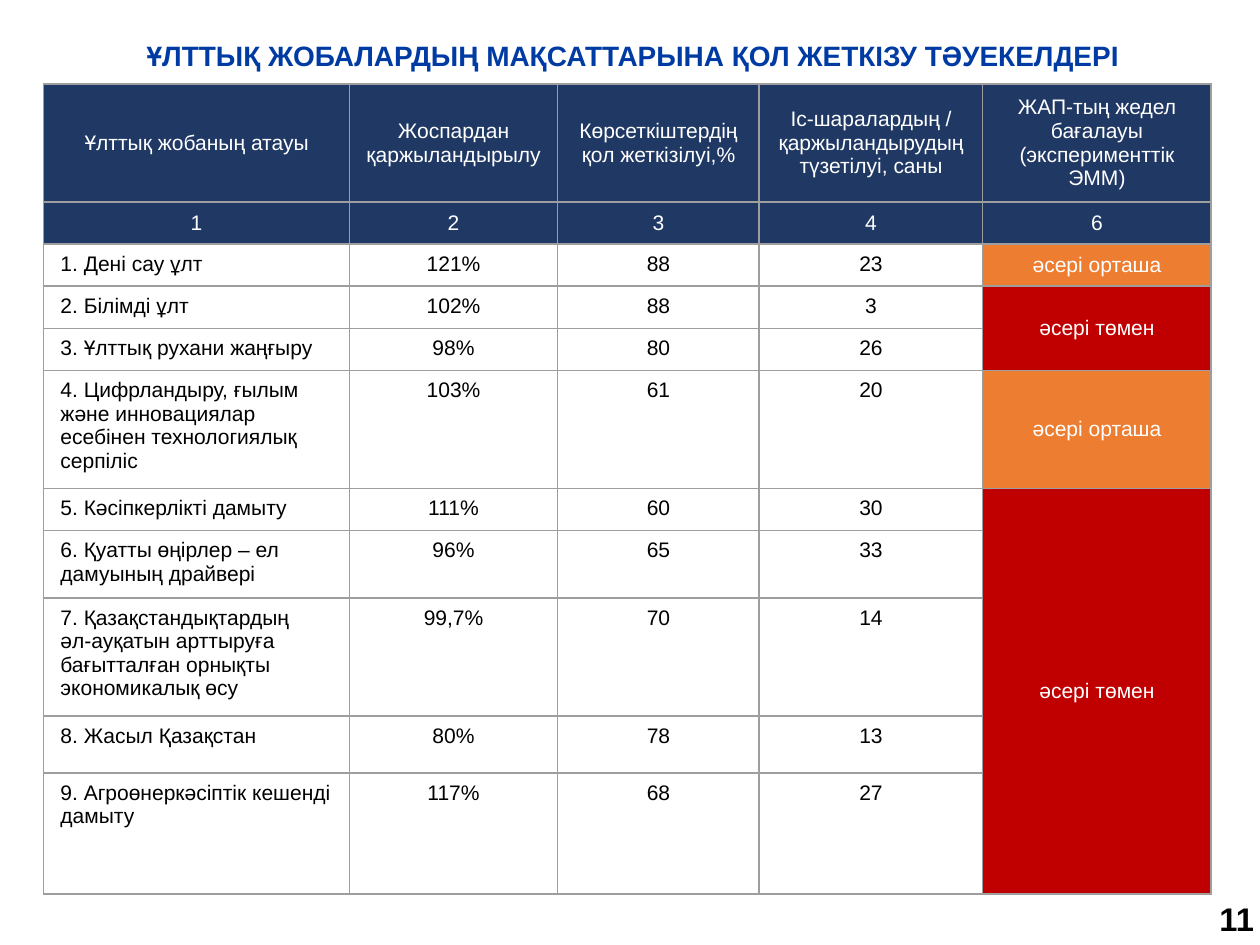
from pptx import Presentation
from pptx.dml.color import RGBColor
from pptx.enum import text
from pptx.oxml import parse_xml
from pptx.oxml.ns import nsdecls
from pptx.util import Inches, Pt

TITLE_BLUE = RGBColor(0x00, 0x3B, 0xA3)
NAVY = RGBColor(0x20, 0x38, 0x64)
ORANGE = RGBColor(0xED, 0x7D, 0x31)
RED = RGBColor(0xC0, 0x00, 0x00)
WHITE = RGBColor(0xFF, 0xFF, 0xFF)
BLACK = RGBColor(0x00, 0x00, 0x00)
BORDER = RGBColor(0x9E, 0x9E, 0x9E)

LEFT, CENTER = text.PP_ALIGN.LEFT, text.PP_ALIGN.CENTER
TOP, MIDDLE = text.MSO_ANCHOR.TOP, text.MSO_ANCHOR.MIDDLE

COLUMN_WIDTHS = [1.82, 1.24, 1.2, 1.33, 1.36]
ROW_HEIGHTS = [0.61, 0.17, 0.25, 0.25, 0.25, 0.29, 0.16, 0.4, 0.55, 0.34, 0.72]
HEADERS = [
    ["Ұлттық жобаның атауы", "Жоспардан қаржыландырылу",
     "Көрсеткіштердің қол жеткізілуі,%",
     "Іс-шаралардың / қаржыландырудың түзетілуі, саны",
     "ЖАП-тың жедел бағалауы\n(эксперименттік ЭММ)"],
    ["1", "2", "3", "4", "6"],
]
PROJECTS = [
    ["1. Дені сау ұлт", "121%", "88", "23"],
    ["2. Білімді ұлт", "102%", "88", "3"],
    ["3. Ұлттық рухани жаңғыру", "98%", "80", "26"],
    ["4. Цифрландыру, ғылым және инновациялар есебінен технологиялық серпіліс",
     "103%", "61", "20"],
    ["5. Кәсіпкерлікті дамыту", "111%", "60", "30"],
    ["6. Қуатты өңірлер – ел дамуының драйвері", "96%", "65", "33"],
    ["7. Қазақстандықтардың\nәл-ауқатын арттыруға бағытталған орнықты "
     "экономикалық өсу", "99,7%", "70", "14"],
    ["8. Жасыл Қазақстан", "80%", "78", "13"],
    ["9. Агроөнеркәсіптік кешенді дамыту", "117%", "68", "27"],
]
MEDIUM = ("әсері орташа", ORANGE)
LOW = ("әсері төмен", RED)
RATINGS = [(MEDIUM, 1), (LOW, 2), (MEDIUM, 1), (LOW, 5)]  # rating, rows covered


def write(tf, content, size, color, align=LEFT, bold=False):
    for i, line in enumerate(content.split("\n")):
        p = tf.paragraphs[0] if i == 0 else tf.add_paragraph()
        p.alignment = align
        r = p.add_run()
        r.text = line
        r.font.name = "Arial"
        r.font.size = Pt(size)
        r.font.bold = bold
        r.font.color.rgb = color


def add_label(slide, box, content, size, color, align=LEFT, inset=None):
    tf = slide.shapes.add_textbox(*map(Inches, box)).text_frame
    tf.word_wrap = True
    if inset is not None:
        tf.margin_left = tf.margin_right = Inches(inset)
        tf.margin_top = tf.margin_bottom = Inches(inset)
    write(tf, content, size, color, align, bold=True)
    return tf


def add_borders(cell):
    tc_pr = cell._tc.get_or_add_tcPr()
    for i, side in enumerate(("lnL", "lnR", "lnT", "lnB")):
        tc_pr.insert(i, parse_xml(
            f'<a:{side} {nsdecls("a")} w="{Pt(0.75)}"><a:solidFill>'
            f'<a:srgbClr val="{BORDER}"/></a:solidFill></a:{side}>'))


def fill_cell(cell, content, color, fill=None, align=CENTER, anchor=TOP):
    cell.vertical_anchor = anchor
    if fill is not None:
        cell.fill.solid()
        cell.fill.fore_color.rgb = fill
    write(cell.text_frame, content, 9, color, align)


def add_risk_table(slide, left, top, width, height):
    frame = slide.shapes.add_table(
        len(ROW_HEIGHTS), len(COLUMN_WIDTHS),
        Inches(left), Inches(top), Inches(width), Inches(height))
    table = frame.table
    table.first_row = table.horz_banding = False
    for column, column_width in zip(table.columns, COLUMN_WIDTHS):
        column.width = Inches(column_width)
    for row, row_height in zip(table.rows, ROW_HEIGHTS):
        row.height = Inches(row_height)
    frame.height = Inches(height)
    for cell in table.iter_cells():
        cell.fill.background()
        add_borders(cell)

    for i, labels in enumerate(HEADERS):
        for j, label in enumerate(labels):
            fill_cell(table.cell(i, j), label, WHITE, NAVY, anchor=MIDDLE)
    for i, values in enumerate(PROJECTS, len(HEADERS)):
        for j, value in enumerate(values):
            fill_cell(table.cell(i, j), value, BLACK,
                      align=CENTER if j else LEFT)

    last = len(COLUMN_WIDTHS) - 1
    start = len(HEADERS)
    for (rating, color), count in RATINGS:
        cell = table.cell(start, last)
        if count > 1:
            cell.merge(table.cell(start + count - 1, last))
        fill_cell(cell, rating, WHITE, color, anchor=MIDDLE)
        start += count


def main():
    prs = Presentation()
    prs.slide_width = Inches(7.5)
    prs.slide_height = prs.slide_width * 3 // 4
    slide = prs.slides.add_slide(prs.slide_layouts[6])
    add_label(slide, (0.33, 0.16, 6.88, 0.34),
              "ҰЛТТЫҚ ЖОБАЛАРДЫҢ МАҚСАТТАРЫНА ҚОЛ ЖЕТКІЗУ ТӘУЕКЕЛДЕРІ",
              12, TITLE_BLUE, CENTER, inset=0.07)
    add_risk_table(slide, 0.26, 0.5, 6.95, 4.82)
    number = add_label(slide, (7.16, 5.3, 0.42, 0.34), "11", 14, BLACK)
    number.margin_right = 0
    prs.save("out.pptx")


if __name__ == "__main__":
    main()
